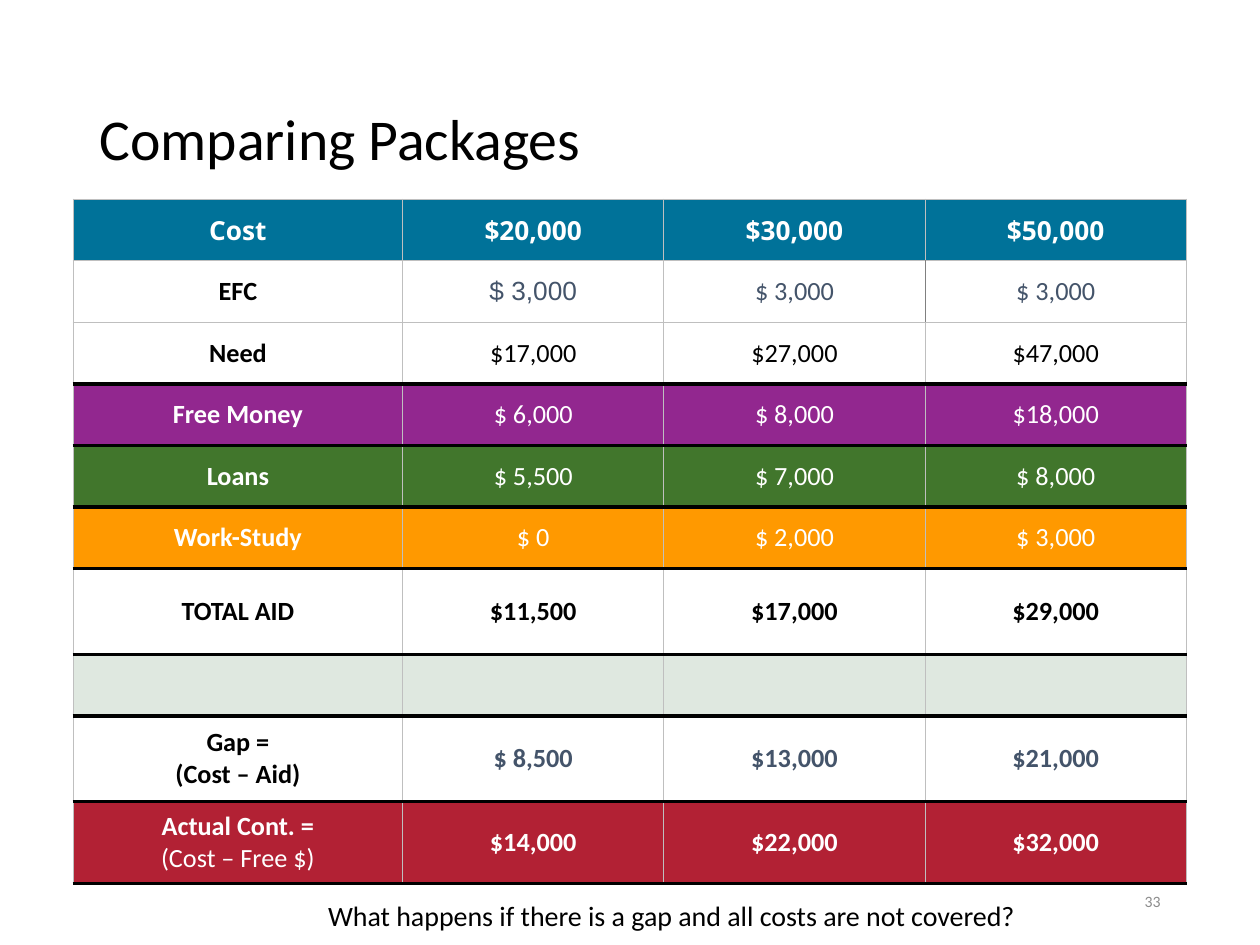
from lxml import etree
from pptx import Presentation
from pptx.dml.color import RGBColor
from pptx.enum.text import MSO_ANCHOR, PP_ALIGN
from pptx.oxml.ns import qn
from pptx.util import Pt

LEFT, CENTER, RIGHT = PP_ALIGN.LEFT, PP_ALIGN.CENTER, PP_ALIGN.RIGHT
TOP, MIDDLE = MSO_ANCHOR.TOP, MSO_ANCHOR.MIDDLE

COLORS = {
    "white": "FFFFFF", "black": "000000", "slate": "44546A", "number": "8C8C8C",
    "grid": "BFBFBF", "divider": "808080", "header": "007299", "free": "92278F",
    "loans": "41762C", "work": "FF9900", "spacer": "2D6831", "actual": "B22134",
}
BODY, HEADING = "Calibri", "Open Sans"
THIN, THICK = ("grid", 0.75), ("black", 2.25)

# Cell texts, fill, label colour, value colour, bold values, row height
ROWS = [
    (["Cost", "$20,000", "$30,000", "$50,000"], "header", "white", "white", True, 35.2),
    (["EFC", "$ 3,000", "$ 3,000", "$ 3,000"], "white", "black", "slate", False, 35.2),
    (["Need", "$17,000", "$27,000", "$47,000"], "white", "black", "black", False, 35.2),
    (["Free Money", "$ 6,000", "$ 8,000", "$18,000"], "free", "white", "white", False, 35.2),
    (["Loans", "$ 5,500", "$ 7,000", "$ 8,000"], "loans", "white", "white", False, 35.2),
    (["Work-Study", "$ 0", "$ 2,000", "$ 3,000"], "work", "white", "white", False, 35.2),
    (["TOTAL AID", "$11,500", "$17,000", "$29,000"], "white", "black", "black", True, 49),
    (["", "", "", ""], "spacer", "black", "black", False, 35.2),
    (["Gap =\v(Cost – Aid)", "$ 8,500", "$13,000", "$21,000"],
     "white", "black", "slate", True, 49),
    (["Actual Cont. =\v(Cost – Free $)", "$14,000", "$22,000", "$32,000"],
     "actual", "white", "white", True, 46.8),
]
COLUMNS = [188.3, 149.3, 149.3, 149.3]
FIRST_RULED_ROW = 3  # thick rules run from the top of this row down


class SlideBuilder:
    def __init__(self, prs):
        self.slide = prs.slides.add_slide(prs.slide_layouts[5])

    def format_text(self, tf, size, color, font=BODY, bold=False, align=LEFT):
        for p in tf.paragraphs:
            p.alignment = align
            for r in p.runs:
                r.font.size, r.font.name, r.font.bold = Pt(size), font, bold
                r.font.color.rgb = RGBColor.from_string(COLORS[color])

    def title(self, text, box, size):
        sp = self.slide.shapes.title
        sp.left, sp.top, sp.width, sp.height = [Pt(v) for v in box]
        tf = sp.text_frame
        tf.text = text
        tf.vertical_anchor = MIDDLE
        tf.paragraphs[0].line_spacing = 0.9
        self.format_text(tf, size, "black")

    def text(self, text, box, size, color, align, anchor=TOP, level=0):
        tf = self.slide.shapes.add_textbox(*[Pt(v) for v in box]).text_frame
        tf.word_wrap = True
        tf.vertical_anchor = anchor
        tf.text = text
        tf.paragraphs[0].level = level
        self.format_text(tf, size, color, align=align)

    def borders(self, cell, sides):
        tc_pr = cell._tc.get_or_add_tcPr()
        for i, side in enumerate("LRTB"):
            color, width = sides[side]
            ln = etree.Element(qn("a:ln" + side), w=str(Pt(width)))
            fill = etree.SubElement(ln, qn("a:solidFill"))
            etree.SubElement(fill, qn("a:srgbClr"), val=COLORS[color])
            tc_pr.insert(i, ln)

    def cell(self, cell, text, fill, color, font, bold):
        cell.margin_top = cell.margin_bottom = 0
        cell.vertical_anchor = MIDDLE
        cell.fill.solid()
        cell.fill.fore_color.rgb = RGBColor.from_string(COLORS[fill])
        if fill == "spacer":
            rgb = cell._tc.tcPr.find(".//" + qn("a:srgbClr"))
            etree.SubElement(rgb, qn("a:alpha"), val="15000")
        cell.text_frame.text = text
        self.format_text(cell.text_frame, 15, color, font, bold, CENTER)

    def table(self, left, top):
        height = sum(row[-1] for row in ROWS)
        table = self.slide.shapes.add_table(
            len(ROWS), len(COLUMNS), Pt(left), Pt(top), Pt(sum(COLUMNS)), Pt(height)).table
        table.first_row = table.horz_banding = False
        for column, width in zip(table.columns, COLUMNS):
            column.width = Pt(width)
        for i, (texts, fill, label, value, bold, row_height) in enumerate(ROWS):
            table.rows[i].height = Pt(row_height)
            for j, text in enumerate(texts):
                self.cell(table.cell(i, j), text, fill, value if j else label,
                          HEADING if i == 0 else BODY, bold or j == 0)
                sides = {"L": THIN, "R": THIN,
                         "T": THICK if i >= FIRST_RULED_ROW else THIN,
                         "B": THICK if i >= FIRST_RULED_ROW - 1 else THIN}
                if i == 1 and j >= 2:
                    sides["R" if j == 2 else "L"] = ("divider", 0.5)
                self.borders(table.cell(i, j), sides)
        return table


def main():
    prs = Presentation()
    prs.slide_width, prs.slide_height = Pt(720), Pt(540)
    s = SlideBuilder(prs)

    # Title and slide number
    s.title("Comparing Packages", (49.7, 28.8, 620.6, 104.4), 33)
    s.text("33", (508.3, 500.4, 162, 28.8), 9, "number", RIGHT, MIDDLE)

    # Comparison table, with two runs that differ from their row
    table = s.table(41.8, 113.8)
    table.cell(1, 1).text_frame.paragraphs[0].runs[0].font.name = "Arial"
    table.cell(9, 0).text_frame.paragraphs[0].runs[-1].font.bold = False

    # Closing question
    s.text("What happens if there is a gap and all costs are not covered?",
           (5.8, 509.8, 720, 26.6), 16, "black", CENTER, level=1)

    prs.save("out.pptx")


if __name__ == "__main__":
    main()
